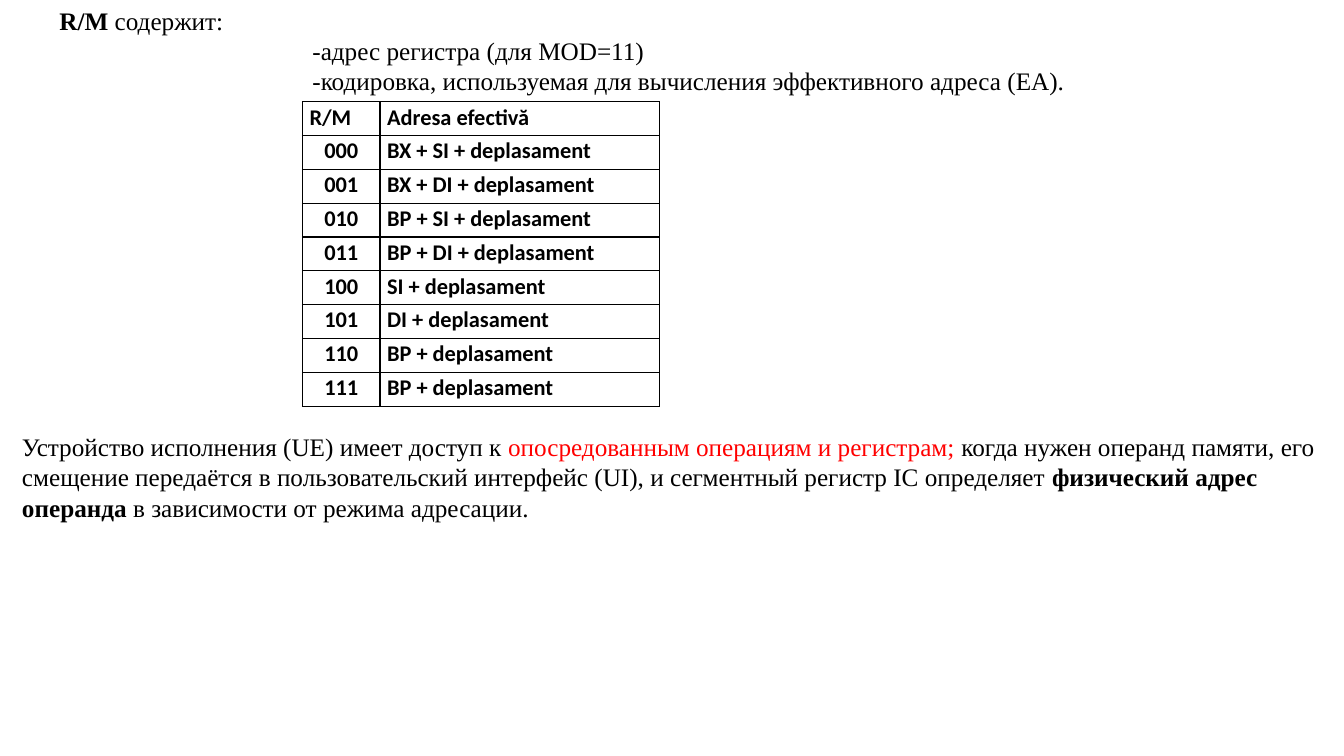
from lxml import etree
from pptx import Presentation
from pptx.dml.color import RGBColor
from pptx.enum import text
from pptx.oxml import ns
from pptx.util import Inches, Pt

BLACK, RED = "000000", "FF0000"
ALIGN = text.PP_ALIGN

ADDRESSES = [
    ("R/M", "Adresa efectivă"),
    ("000", "BX + SI + deplasament"),
    ("001", "BX + DI + deplasament"),
    ("010", "BP + SI + deplasament"),
    ("011", "BP + DI + deplasament"),
    ("100", "SI + deplasament"),
    ("101", "DI + deplasament"),
    ("110", "BP + deplasament"),
    ("111", "BP + deplasament"),
]


def style(span, font, size, color=BLACK, bold=False):
    span.font.name = font
    span.font.size = Pt(size)
    span.font.bold = bold
    span.font.color.rgb = RGBColor.from_string(color)


def add_text(page, left, top, width, height, paragraphs):
    """Each paragraph is (indent, spans); each span is (words, color, bold)."""
    box = page.shapes.add_textbox(Inches(left), Inches(top), Inches(width), Inches(height))
    frame = box.text_frame
    frame.word_wrap = True
    for index, (indent, spans) in enumerate(paragraphs):
        para = frame.paragraphs[0] if index == 0 else frame.add_paragraph()
        para.alignment = ALIGN.LEFT
        para._p.get_or_add_pPr().set("marL", str(Inches(indent)))
        for words, color, bold in spans:
            span = para.add_run()
            span.text = words
            style(span, "Times New Roman", 18, color, bold)


def add_borders(cell):
    properties = cell._tc.get_or_add_tcPr()
    for index, side in enumerate(("lnL", "lnR", "lnT", "lnB")):
        line = etree.Element(ns.qn(f"a:{side}"), w=str(Pt(1)))
        fill = etree.SubElement(line, ns.qn("a:solidFill"))
        etree.SubElement(fill, ns.qn("a:srgbClr"), val=BLACK)
        properties.insert(index, line)


def fill_cell(cell, words, alignment):
    cell.fill.background()
    cell.margin_left = cell.margin_right = Inches(0.07)
    cell.margin_top = cell.margin_bottom = 0
    cell.text_frame.text = words
    para = cell.text_frame.paragraphs[0]
    para.alignment = alignment
    para.line_spacing = 1.07
    style(para.runs[0], "Calibri", 16, bold=True)
    add_borders(cell)


def add_address_table(page, left, top, widths, height):
    frame = page.shapes.add_table(len(ADDRESSES), len(widths), Inches(left), Inches(top),
                                  Inches(sum(widths)), Inches(height))
    table = frame.table
    table.first_row = table.horz_banding = False
    for column, width in zip(table.columns, widths):
        column.width = Inches(width)
    for row, values in enumerate(ADDRESSES):
        for column, words in enumerate(values):
            is_code = row > 0 and column == 0
            fill_cell(table.cell(row, column), words, ALIGN.CENTER if is_code else ALIGN.JUSTIFY)


def main():
    deck = Presentation()
    deck.slide_width, deck.slide_height = Inches(13.33), Inches(7.5)
    page = deck.slides.add_slide(deck.slide_layouts[6])

    # What the R/M field holds
    add_text(page, 0, 0, 12.35, 1.01, [
        (0.49, [("R/M ", BLACK, True), ("содержит:", BLACK, False)]),
        (3, [("-адрес регистра (для MOD=11)", BLACK, False)]),
        (3, [("-кодировка, используемая для вычисления эффективного адреса (EA).", BLACK, False)]),
    ])

    # Effective address codes
    add_address_table(page, 3, 1.01, (0.77, 2.77), 3.02)

    # Execution unit
    add_text(page, 0.12, 4.23, 13.07, 1.01, [(0, [
        ("Устройство исполнения (UE) имеет доступ к ", BLACK, False),
        ("опосредованным операциям и регистрам; ", RED, False),
        ("когда нужен операнд памяти, его смещение передаётся в пользовательский интерфейс (UI), "
         "и сегментный регистр IC определяет ", BLACK, False),
        ("физический адрес операнда ", BLACK, True),
        ("в зависимости от режима адресации.", BLACK, False),
    ])])

    deck.save("out.pptx")


if __name__ == "__main__":
    main()
